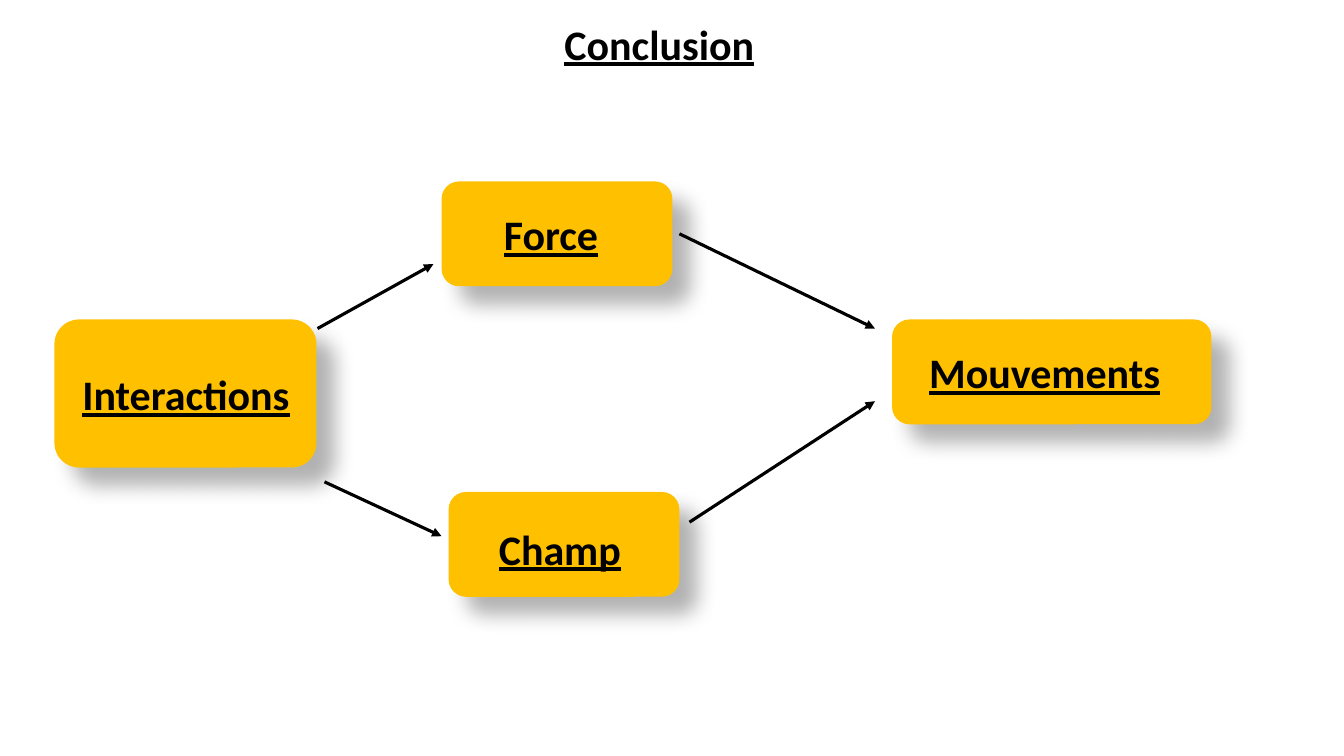
from lxml import etree
from pptx import Presentation
from pptx import util as u
from pptx.dml.color import RGBColor
from pptx.enum import shapes, text
from pptx.oxml import ns

Pt = u.Pt
HUES = {"ink": "000000", "box": "FFC000", "page": "FFFFFF"}
FONT = {"name": "Calibri", "size": Pt(30), "bold": True, "underline": True}
FRAME = {
    "word_wrap": True,
    "vertical_anchor": text.MSO_ANCHOR.TOP,
    "auto_size": text.MSO_AUTO_SIZE.SHAPE_TO_FIT_TEXT,
    "margin_left": Pt(7.2),
    "margin_right": Pt(7.2),
    "margin_top": Pt(3.6),
    "margin_bottom": Pt(3.6),
}
SHADE = {"blurRad": Pt(15), "dist": Pt(18), "dir": 45 * 60000,
         "algn": "tl", "rotWithShape": 0}
LINE_H = 43.9
TITLE = (396, 9.4, 352.8, LINE_H)
NODES = [
    ("Interactions", (38.9, 228.2, 187.2, 105.8), (51.8, 259.9, 175)),
    ("Force", (315.4, 129.6, 164.9, 74.9), (352.8, 145.4, 122.4)),
    ("Champ", (320.4, 351.4, 164.9, 74.9), (349.2, 370.1, 113.8)),
    ("Mouvements", (637.2, 228.2, 228.2, 74.9), (656.6, 244.1, 228.2)),
]
ARROWS = [
    (226.8, 234.7, 309.6, 188.6),
    (231.8, 344.2, 315.4, 383),
    (485.3, 167, 625, 234.7),
    (492.5, 373, 625, 286.6),
]


def hue(key):
    return RGBColor.from_string(HUES[key])


def points(vals):
    return [Pt(v) for v in vals]


def assign(item, vals):
    for key, val in vals.items():
        setattr(item, key, val)


def child(root, tag, **vals):
    node = etree.SubElement(root, ns.qn(tag))
    for key, val in vals.items():
        node.set(key, str(val))
    return node


def write(shape, words):
    frame = shape.text_frame
    assign(frame, FRAME)
    par = frame.paragraphs[0]
    par.alignment = text.PP_ALIGN.LEFT
    run = par.add_run()
    run.text = words
    assign(run.font, FONT)
    run.font.color.rgb = hue("ink")


def add_title(slide, words):
    title = slide.shapes.title
    assign(title, dict(zip(("left", "top", "width", "height"), points(TITLE))))
    write(title, words)


def add_box(slide, place):
    box = slide.shapes.add_shape(
        shapes.MSO_SHAPE.ROUNDED_RECTANGLE, *points(place))
    box.fill.solid()
    box.fill.fore_color.rgb = hue("box")
    box.line.fill.background()
    box.shadow.inherit = False
    effects = box.element.spPr.find(ns.qn("a:effectLst"))
    shade = child(effects, "a:outerShdw", **SHADE)
    tint = child(shade, "a:srgbClr", val=HUES["ink"])
    child(tint, "a:alpha", val=30000)


def add_label(slide, words, place):
    write(slide.shapes.add_textbox(*points((*place, LINE_H))), words)


def add_arrow(slide, ends):
    arrow = slide.shapes.add_connector(
        shapes.MSO_CONNECTOR.STRAIGHT, *points(ends))
    arrow.line.width = Pt(2.25)
    arrow.line.color.rgb = hue("ink")
    child(arrow.line._get_or_add_ln(), "a:tailEnd", type="triangle")
    child(arrow.element.spPr, "a:effectLst")


def main():
    deck = Presentation()
    deck.slide_width, deck.slide_height = Pt(960), Pt(540)
    slide = deck.slides.add_slide(deck.slide_layouts[5])
    slide.background.fill.solid()
    slide.background.fill.fore_color.rgb = hue("page")
    add_title(slide, "Conclusion")
    for words, place, label in NODES:
        add_box(slide, place)
        add_label(slide, words, label)
    for ends in ARROWS:
        add_arrow(slide, ends)
    deck.save("out.pptx")


if __name__ == "__main__":
    main()
